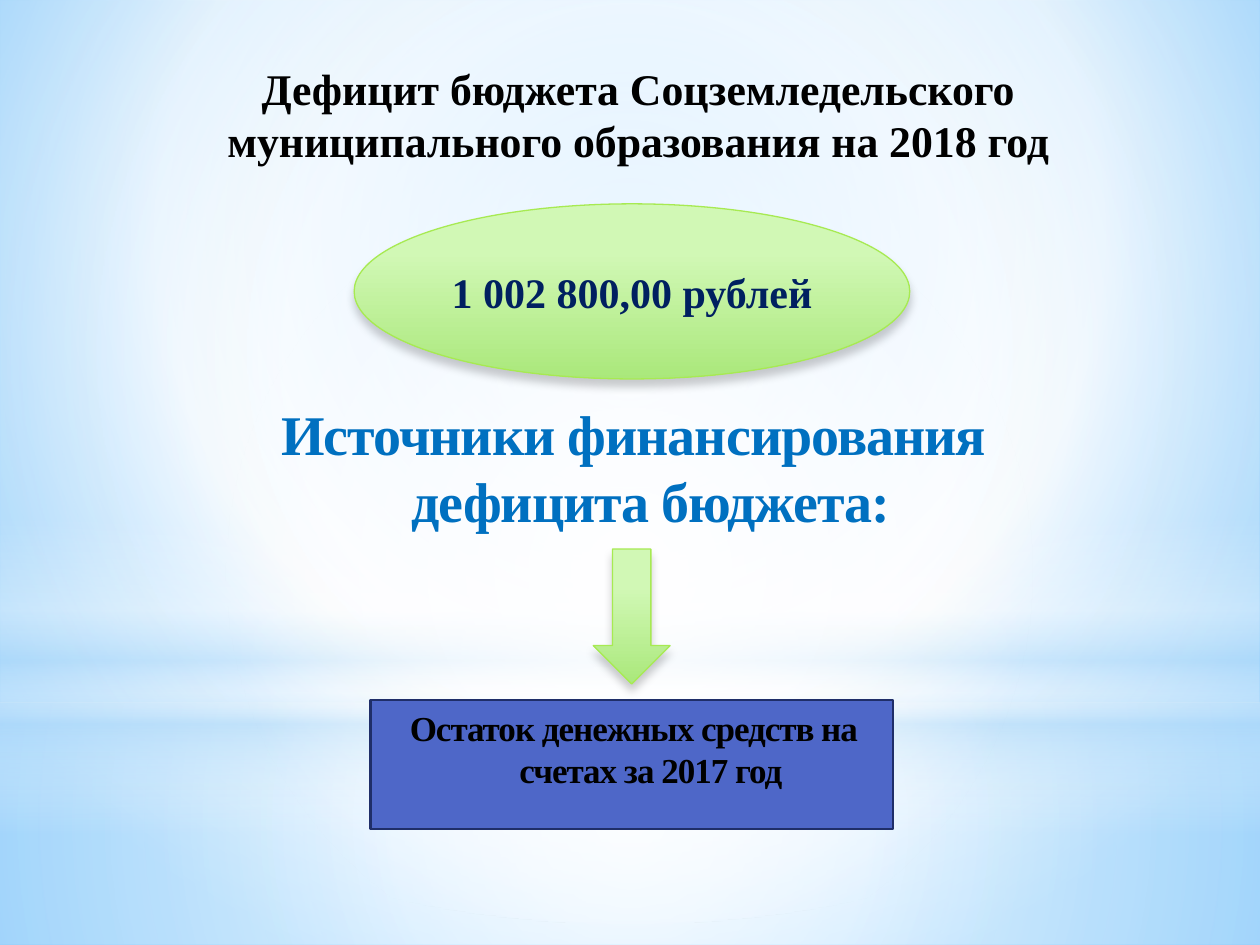
from lxml.etree import SubElement as Sub
from pptx import Presentation
from pptx.dml.color import RGBColor as Rgb
from pptx.enum.shapes import MSO_SHAPE as Kind
from pptx.enum.text import MSO_ANCHOR as Anchor, PP_ALIGN as Align
from pptx.oxml.ns import qn
from pptx.util import Cm, Pt

WIDE, HIGH = 25.4, 19.05
HUES = {
    "white": "FFFFFF", "black": "000000", "pale": "B4DCFA",
    "sky": "9ED5FF", "azure": "5BB9FF", "mint": "D1F8B5",
    "leaf": "AAE87B", "lime": "A7EA52", "blue": "0070C0",
    "navy": "002060", "indigo": "4E67C8", "ink": "1F2E69",
}
MID = (50, 50, 50, 50)
BACK = ([(0, "sky", 100), (60, "white", 100), (100, "azure", 100)], (20, 10, 20, 60))
GREEN = ([(28, "mint", 100), (100, "leaf", 100)], None)

GLOWS = [
    (Kind.RECTANGLE, 14.17, 4.88,
     ([(0, "white", 91), (37, "white", 76), (100, "pale", 79)], MID)),
    (Kind.RECTANGLE, 0, 14.17,
     ([(0, "white", 89), (48, "white", 62), (100, "pale", 79)], MID)),
    (Kind.RECTANGLE, 10.46, 6.35,
     ([(0, "white", 0), (29, "white", 30), (45, "pale", 40),
       (55, "white", 26), (65, "pale", 60), (100, "white", 0)], None)),
    (Kind.OVAL, 4.45, 14.17, ([(0, "white", 100), (56, "white", 0)], MID)),
]
TITLE = "Дефицит бюджета Соцземледельского муниципального образования на 2018 год"
SOURCE = "Источники финансирования дефицита бюджета:"
REST = "Остаток денежных средств на счетах за 2017 год"
SUM = "1 002 800,00 рублей"


def color(name):
    return Rgb.from_string(HUES[name])


def blend(fill, props, grad):
    stops, focus = grad
    fill.solid()
    old = props.find(qn("a:solidFill"))
    new = props.makeelement(qn("a:gradFill"), {"rotWithShape": "1"})
    props.replace(old, new)
    items = Sub(new, qn("a:gsLst"))
    for pos, name, alpha in stops:
        stop = Sub(items, qn("a:gs"), pos=str(pos * 1000))
        tint = Sub(stop, qn("a:srgbClr"), val=HUES[name])
        if alpha < 100:
            Sub(tint, qn("a:alpha"), val=str(alpha * 1000))
    if focus:
        way = Sub(new, qn("a:path"), path="circle")
        sides = {side: str(num * 1000) for side, num in zip("ltrb", focus)}
        Sub(way, qn("a:fillToRect"), sides)
    else:
        Sub(new, qn("a:lin"), ang="5400000", scaled="0")


def shape(kind, box):
    item = slide.shapes.add_shape(kind, *map(Cm, box))
    item.shadow.inherit = False
    item.line.fill.background()
    return item


def edge(item, name, width):
    item.line.color.rgb = color(name)
    item.line.width = Pt(width)


def green(kind, box):
    item = shape(kind, box)
    props = item.element.spPr
    blend(item.fill, props, GREEN)
    edge(item, "lime", 0.75)
    shade = Sub(props.find(qn("a:effectLst")), qn("a:outerShdw"),
                blurRad=str(Pt(5)), dist=str(Pt(4)), dir="5400000", rotWithShape="0")
    tint = Sub(shade, qn("a:srgbClr"), val=HUES["black"])
    Sub(tint, qn("a:alpha"), val="20000")
    return item


def write(item, text, size, name, hang=False, anchor=Anchor.TOP):
    frame = item.text_frame
    frame.word_wrap = True
    frame.vertical_anchor = anchor
    para = frame.paragraphs[0]
    para.text = text
    para.alignment = Align.CENTER
    font = para.font
    font.name, font.size, font.bold = "Times New Roman", Pt(size), True
    font.color.rgb = color(name)
    if hang:
        para.space_before = Pt(size * 0.2)
        props = para._p.get_or_add_pPr()
        props.set("marL", str(Cm(0.76)))
        props.set("indent", str(Cm(-0.71)))
        para.runs[0].font._element.set("spc", "-60")


def label(box, *args):
    write(slide.shapes.add_textbox(*map(Cm, box)), *args)


deck = Presentation()
deck.slide_width, deck.slide_height = Cm(WIDE), Cm(HIGH)
slide = deck.slides.add_slide(deck.slide_layouts[6])
fill = slide.background.fill
fill.solid()
blend(fill, slide.element.find(".//" + qn("p:bgPr")), BACK)

for kind, top, high, grad in GLOWS:
    glow = shape(kind, (0, top, WIDE, high))
    blend(glow.fill, glow.element.spPr, grad)

label((1.98, 1.12, 21.77, 2.39), TITLE, 25, "black")

rest = shape(Kind.RECTANGLE, (7.47, 14.12, 10.54, 2.59))
rest.fill.solid()
rest.fill.fore_color.rgb = color("indigo")
edge(rest, "ink", 1.25)
write(rest, REST, 20, "black", True)

label((4.6, 7.92, 16.28, 1.35), SOURCE, 32, "blue", True)
green(Kind.DOWN_ARROW, (11.96, 11.07, 1.55, 2.72))
total = green(Kind.OVAL, (7.14, 4.11, 11.2, 3.53))
write(total, SUM, 24, "navy", False, Anchor.MIDDLE)

deck.save("out.pptx")
